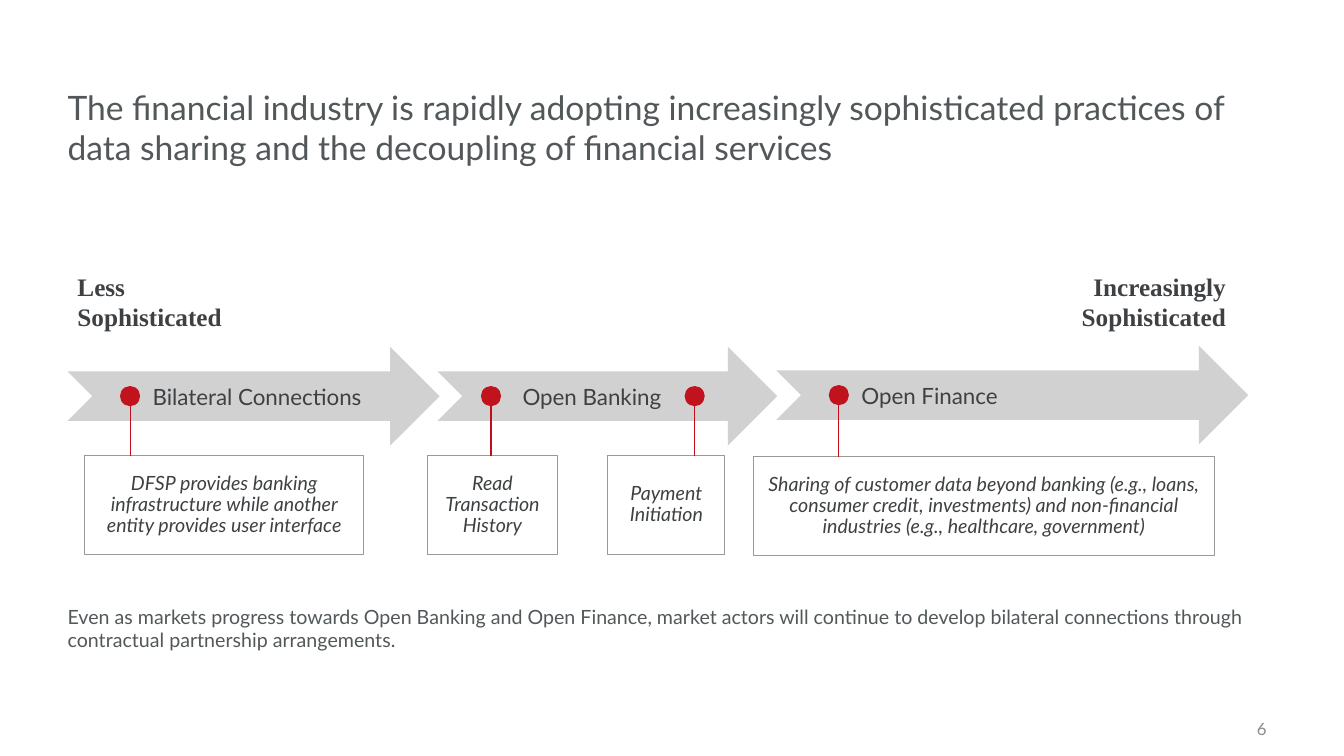
from dataclasses import dataclass

from lxml import etree
from pptx import Presentation
from pptx.dml.color import RGBColor
from pptx.enum.shapes import MSO_CONNECTOR, MSO_SHAPE
from pptx.enum.text import MSO_ANCHOR, PP_ALIGN
from pptx.oxml.ns import qn
from pptx.util import Pt

ARROW, DOT, RECT = MSO_SHAPE.NOTCHED_RIGHT_ARROW, MSO_SHAPE.OVAL, MSO_SHAPE.RECTANGLE
STRAIGHT = MSO_CONNECTOR.STRAIGHT
TOP, MIDDLE = MSO_ANCHOR.TOP, MSO_ANCHOR.MIDDLE
LEFT, CENTER, RIGHT = PP_ALIGN.LEFT, PP_ALIGN.CENTER, PP_ALIGN.RIGHT

PX = 9144  # EMU per px, 100 px to the inch
DOT_SIZE = 20
NOTE_HEIGHT = 98


@dataclass(frozen=True)
class Theme:
    sans: str = "Lato"
    serif: str = "Times New Roman"
    heading: str = "525759"
    text: str = "3E4143"
    page: str = "8C8C8C"
    white: str = "FFFFFF"
    arrow: str = "D1D1D1"
    border: str = "999996"
    dot: str = "C1131E"
    stem: str = "C10E1A"
    title_size: int = 24
    end_size: int = 18
    stage_size: int = 16
    body_size: int = 14
    page_size: int = 12
    line: float = 0.75


T = Theme()

# Arrow box, label, top of notes, and per note: dot x, note x (from arrow left), width, text
STAGES = [
    ((67, 344, 369, 98), "Bilateral Connections", 452, [
        (62, 17, 277, "DFSP provides banking infrastructure while another "
                      "entity provides user interface")]),
    ((434, 344, 337, 98), "Open Banking", 452, [
        (53, -10, 129, "Read Transaction History"),
        (255, 169, 116, "Payment Initiation")]),
    ((770, 343, 468, 98), "Open Finance", 453, [
        (62, -23, 458, "Sharing of customer data beyond banking (e.g., loans, "
                       "consumer credit, investments) and non-financial "
                       "industries (e.g., healthcare, government)")]),
]


def emu(box):
    return [v * PX for v in box]


def add_block(s, kind, box, fill=None, line=None):
    sp = s.shapes.add_shape(kind, *emu(box))
    sp.shadow.inherit = False
    if fill:
        sp.fill.solid()
        sp.fill.fore_color.rgb = RGBColor.from_string(fill)
    else:
        sp.fill.background()
    if line:
        sp.line.color.rgb = RGBColor.from_string(line)
        sp.line.width = Pt(T.line)
    else:
        sp.line.fill.background()
    return sp


def write(sp, lines, size, color, font=T.sans, align=LEFT, anchor=TOP,
          inset=None, bold=None, italic=None):
    """Fill a shape with one paragraph, its lines parted by line breaks."""
    tf = sp.text_frame
    tf.word_wrap = True
    tf.vertical_anchor = anchor
    if inset is not None:
        tf.margin_left = tf.margin_right = inset * PX
        tf.margin_top = tf.margin_bottom = inset * PX
    p = tf.paragraphs[0]
    p.alignment = align
    for i, line in enumerate(lines):
        if i:
            p.add_line_break()
        r = p.add_run()
        r.text = line
        r.font.name, r.font.size = font, Pt(size)
        r.font.bold, r.font.italic = bold, italic
        r.font.color.rgb = RGBColor.from_string(color)
    return p


def add_text(s, box, text, size, color, **style):
    write(s.shapes.add_textbox(*emu(box)), [text], size, color, **style)


def add_end_label(s, box, lines, align):
    write(add_block(s, RECT, box, fill=T.white), lines, T.end_size, T.text,
          font=T.serif, align=align, bold=True)


def add_stem(s, x, top, bottom):
    c = s.shapes.add_connector(STRAIGHT, *emu((x, top, x, bottom)))
    c.line.color.rgb = RGBColor.from_string(T.stem)
    c.line.width = Pt(T.line)
    etree.SubElement(c._element.spPr, qn("a:effectLst"))


def add_note(s, box, text):
    p = write(add_block(s, RECT, box, line=T.border), [text], T.body_size, T.text,
              align=CENTER, anchor=MIDDLE, inset=13, italic=True)
    p.line_spacing = 0.9


def add_stage(s, box, label, note_top, notes):
    """Draw a stage arrow with dots on its axis, each tied to a note below."""
    x, y, w, h = box
    p = write(add_block(s, ARROW, box, fill=T.arrow), [label], T.stage_size, T.text,
              anchor=MIDDLE)
    p.level = 1
    pPr = p._p.get_or_add_pPr()
    pPr.set("marL", str(50 * PX))
    pPr.set("indent", "0")
    radius = DOT_SIZE // 2
    axis = y + h // 2
    for dot_x, note_x, note_w, text in notes:
        add_note(s, (x + note_x, note_top, note_w, NOTE_HEIGHT), text)
        add_block(s, DOT, (x + dot_x - radius, axis - radius, DOT_SIZE, DOT_SIZE),
                  fill=T.dot)
        add_stem(s, x + dot_x, axis + radius, note_top)


def main():
    prs = Presentation()
    prs.slide_width, prs.slide_height = emu((1333, 750))
    s = prs.slides.add_slide(prs.slide_layouts[6])

    add_text(s, (67, 80, 1200, 92),
             "The financial industry is rapidly adopting increasingly sophisticated "
             "practices of data sharing and the decoupling of financial services",
             T.title_size, T.heading, anchor=MIDDLE, inset=0)
    add_end_label(s, (67, 264, 401, 71), ["Less ", "Sophisticated"], LEFT)
    add_end_label(s, (893, 264, 339, 71), ["Increasingly ", "Sophisticated "], RIGHT)
    for stage in STAGES:
        add_stage(s, *stage)
    add_text(s, (67, 600, 1198, 70),
             "Even as markets progress towards Open Banking and Open Finance, market "
             "actors will continue to develop bilateral connections through "
             "contractual partnership arrangements.",
             T.body_size, T.heading, inset=0)
    add_text(s, (1211, 712, 55, 23), "6", T.page_size, T.page,
             align=RIGHT, anchor=MIDDLE)

    prs.save("out.pptx")


if __name__ == "__main__":
    main()
